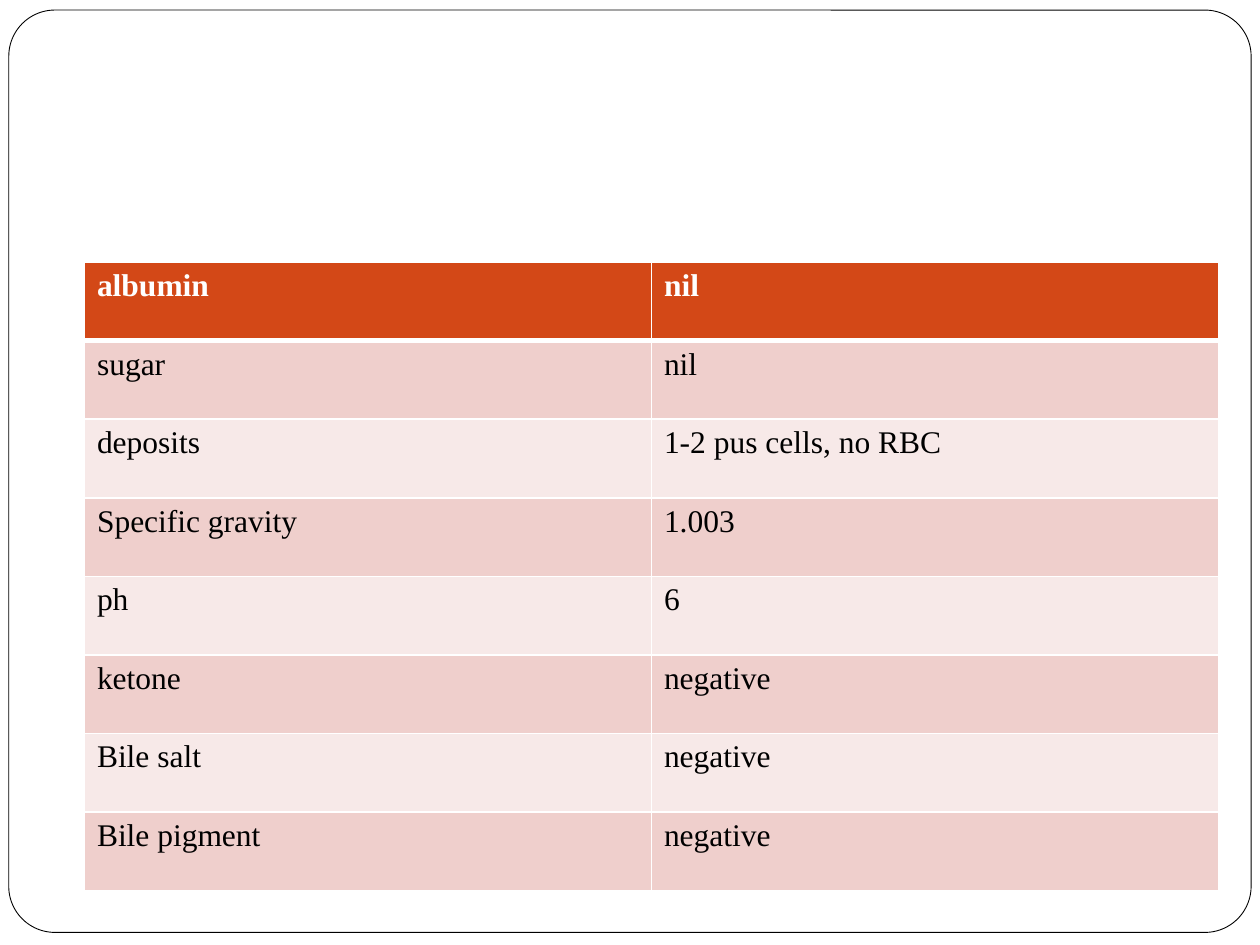
"""Build a slide with a table of urine test results."""
from lxml.etree import SubElement as Sub
from pptx import Presentation
from pptx.dml.color import RGBColor
from pptx.enum.shapes import MSO_SHAPE as Kind
from pptx.oxml.ns import qn
from pptx.util import Inches, Pt

ROWS = [
    ("albumin", "nil"),
    ("sugar", "nil"),
    ("deposits", "1-2 pus cells, no RBC"),
    ("Specific gravity", "1.003"),
    ("ph", "6"),
    ("ketone", "negative"),
    ("Bile salt", "negative"),
    ("Bile pigment", "negative"),
]
HEAD, BANDS = "D34817", ("F7E9E8", "EFCFCC")
WHITE, BLACK = "FFFFFF", "000000"
FRAME = (0.07, 0.08, 9.86, 7.32)
GRID = (0.67, 2.08, 9, 4.99)
FONT = {"name": "Times New Roman", "size": Pt(18)}


def paint(fill, color):
    fill.solid()
    fill.fore_color.rgb = RGBColor.from_string(color)


def edge(cell, side, width):
    line = Sub(cell._tc.get_or_add_tcPr(), qn(f"a:ln{side}"), w=str(Pt(width)))
    Sub(Sub(line, qn("a:solidFill")), qn("a:srgbClr"), val=WHITE)


def add_frame(slide):
    frame = slide.shapes.add_shape(Kind.ROUNDED_RECTANGLE, *map(Inches, FRAME))
    frame.adjustments[0] = 0.05
    frame.shadow.inherit = False
    paint(frame.fill, WHITE)
    paint(frame.line.fill, BLACK)
    frame.line.width = Pt(0.5)


def fill_cell(cell, text, row):
    head = row == 0
    wide = {"T": 3 if row == 1 else 1, "B": 3 if head else 1}
    for side in "LRTB":
        edge(cell, side, wide.get(side, 1))
    paint(cell.fill, HEAD if head else BANDS[row % 2])
    run = cell.text_frame.paragraphs[0].add_run()
    run.text = text
    for key, value in {**FONT, "bold": head}.items():
        setattr(run.font, key, value)
    paint(run.font.fill, WHITE if head else BLACK)


def add_grid(slide):
    size = len(ROWS), len(ROWS[0])
    table = slide.shapes.add_table(*size, *map(Inches, GRID)).table
    for row, texts in enumerate(ROWS):
        for col, text in enumerate(texts):
            fill_cell(table.cell(row, col), text, row)


def main():
    deck = Presentation()
    deck.slide_width, deck.slide_height = Inches(10), Inches(7.5)
    slide = deck.slides.add_slide(deck.slide_layouts[6])
    paint(slide.background.fill, WHITE)
    add_frame(slide)
    add_grid(slide)
    deck.save("out.pptx")


if __name__ == "__main__":
    main()
